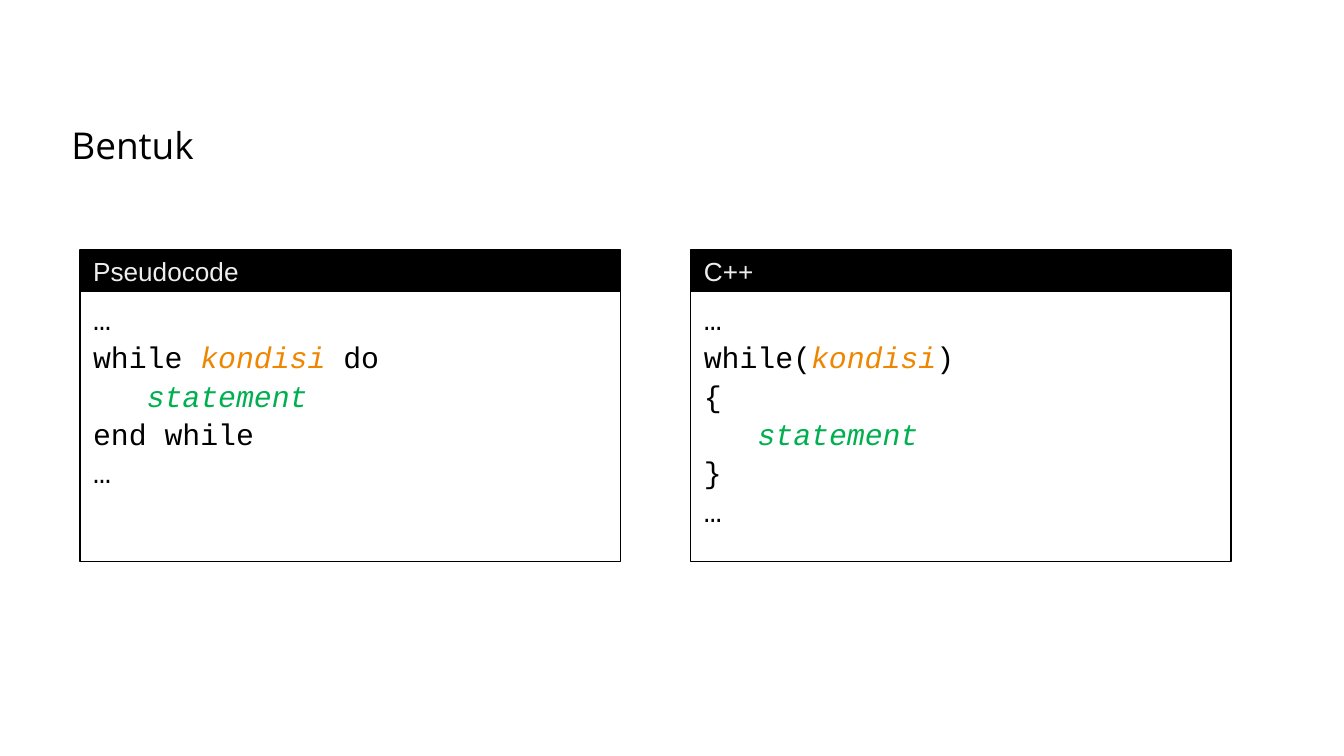
from pptx import Presentation
from pptx.dml.color import RGBColor
from pptx.enum.shapes import MSO_SHAPE
from pptx.enum.text import MSO_ANCHOR, MSO_AUTO_SIZE, PP_ALIGN
from pptx.util import Pt

BLACK, CONDITION, STATEMENT = "000000", "EF8600", "00B050"
HEADER_HEIGHT = 22.3

PSEUDOCODE = [
    [("…", BLACK)],
    [("while ", BLACK), ("kondisi ", CONDITION), ("do", BLACK)],
    [("   ", BLACK), ("statement", STATEMENT)],
    [("end while", BLACK)],
    [("…", BLACK)],
]
CPP = [
    [("…", BLACK)],
    [("while(", BLACK), ("kondisi", CONDITION), (")", BLACK)],
    [("{", BLACK)],
    [("   ", BLACK), ("statement", STATEMENT)],
    [("}", BLACK)],
    [("…", BLACK)],
]


def color(value):
    return RGBColor.from_string(value)


def format_run(run, font_name, size, font_color):
    run.font.name = font_name
    run.font.size = Pt(size)
    run.font.color.rgb = color(font_color)


def add_title(slide, text, left, top, width, height):
    title = slide.shapes.title
    title.left, title.top, title.width, title.height = map(Pt, (left, top, width, height))
    frame = title.text_frame
    frame.text = text
    frame.auto_size = MSO_AUTO_SIZE.NONE
    frame.vertical_anchor = MSO_ANCHOR.TOP
    frame.margin_left = frame.margin_right = Pt(7.2)
    frame.margin_top = frame.margin_bottom = Pt(7.2)
    paragraph = frame.paragraphs[0]
    paragraph.alignment = PP_ALIGN.LEFT
    format_run(paragraph.runs[0], "Open Sans", 19.8, BLACK)


def add_box(slide, left, top, width, height, anchor):
    shape = slide.shapes.add_shape(
        MSO_SHAPE.RECTANGLE, Pt(left), Pt(top), Pt(width), Pt(height))
    shape.shadow.inherit = False
    shape.line.color.rgb = color(BLACK)
    shape.line.width = Pt(0.75)
    shape.text_frame.vertical_anchor = anchor
    return shape


def add_code_panel(slide, heading, lines, left, top, width, height):
    # Code body
    body = add_box(slide, left, top + HEADER_HEIGHT, width,
                   height - HEADER_HEIGHT, MSO_ANCHOR.TOP)
    body.fill.background()
    frame = body.text_frame
    frame.word_wrap = True
    for index, line in enumerate(lines):
        paragraph = frame.add_paragraph() if index else frame.paragraphs[0]
        paragraph.alignment = PP_ALIGN.LEFT
        paragraph.line_spacing = 1.07
        for text, text_color in line:
            run = paragraph.add_run()
            run.text = text
            format_run(run, "Courier New", 16, text_color)
            run.font.italic = text_color != BLACK

    # Header bar
    header = add_box(slide, left, top, width, HEADER_HEIGHT, MSO_ANCHOR.MIDDLE)
    header.fill.solid()
    header.fill.fore_color.rgb = color(BLACK)
    header.text_frame.word_wrap = False
    header.text_frame.text = heading
    paragraph = header.text_frame.paragraphs[0]
    paragraph.alignment = PP_ALIGN.LEFT
    format_run(paragraph.runs[0], "Arial", 14, "EEEEEE")


def main():
    presentation = Presentation()
    presentation.slide_width, presentation.slide_height = Pt(720), Pt(405)
    slide = presentation.slides.add_slide(presentation.slide_layouts[5])
    add_title(slide, "Bentuk", 31, 58.3, 658, 31)

    # Two panels side by side
    for index, (heading, lines) in enumerate([("Pseudocode", PSEUDOCODE), ("C++", CPP)]):
        add_code_panel(slide, heading, lines, 42.8 + index * 327.2, 133.9, 289.5, 167)
    presentation.save("out.pptx")


if __name__ == "__main__":
    main()
